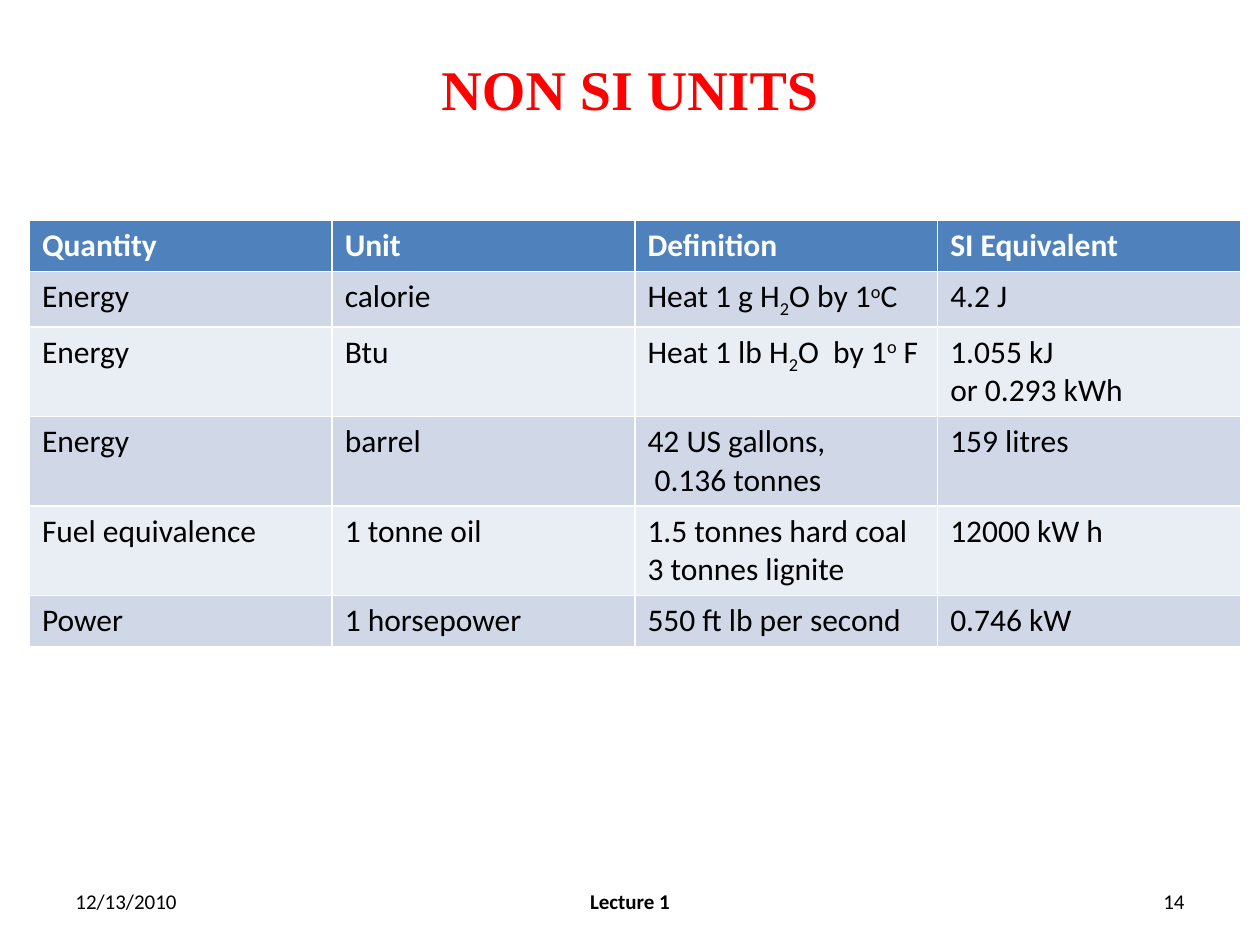
from pptx import Presentation
from pptx.dml.color import RGBColor
from pptx.enum.text import MSO_ANCHOR as Anchor, PP_ALIGN as Align
from pptx.util import Pt

COLORS = {
    "title": "FF0000",
    "text": "000000",
    "header_text": "FFFFFF",
    "header": "4F81BD",
    "odd_band": "D0D8E8",
    "even_band": "E9EDF4",
}
BASELINES = {"_": "-25000", "^": "30000"}

# Each cell: lines split by a newline, runs by "|"; _ lowers a run, ^ raises it
UNITS = [
    ["Quantity", "Unit", "Definition", "SI Equivalent"],
    ["Energy", "calorie", "Heat 1 g H|_2|O by 1|^o|C", "4.2 J"],
    ["Energy", "Btu", "Heat 1 lb H|_2|O  by 1|^o| F", "1.055 kJ\nor 0.293 kWh"],
    ["Energy", "barrel", "42 US gallons,\n 0.136 tonnes", "159 litres"],
    ["Fuel equivalence", "1 tonne oil", "1.5 tonnes hard coal\n3 tonnes lignite", "12000 kW h"],
    ["Power", "1 horsepower", "550 ft lb per second", "0.746 kW"],
]


class SlideBuilder:
    body_font = "Calibri"
    title_font = "Times New Roman"

    def __init__(self, slide):
        self.slide = slide

    def add_text(self, frame, text, size, color="text", bold=False, align=Align.LEFT, font=None):
        for index, line in enumerate(text.split("\n")):
            paragraph = frame.add_paragraph() if index else frame.paragraphs[0]
            paragraph.alignment = align
            for part in line.split("|"):
                baseline = BASELINES.get(part[0])
                run = paragraph.add_run()
                run.text = part[1:] if baseline else part
                run.font.name = font or self.body_font
                run.font.size = Pt(size)
                run.font.bold = bold
                run.font.color.rgb = RGBColor.from_string(COLORS[color])
                if baseline:
                    run._r.get_or_add_rPr().set("baseline", baseline)

    def title(self, text, left, top, width, height):
        heading = self.slide.shapes.title
        heading.left, heading.top = Pt(left), Pt(top)
        heading.width, heading.height = Pt(width), Pt(height)
        heading.text_frame.vertical_anchor = Anchor.MIDDLE
        self.add_text(heading.text_frame, text, 32, "title", True, Align.CENTER, self.title_font)

    def table(self, rows, left, top, column_width, row_height):
        columns = len(rows[0])
        grid = self.slide.shapes.add_table(
            len(rows), columns, Pt(left), Pt(top),
            Pt(column_width * columns), Pt(row_height * len(rows))).table
        for column in grid.columns:
            column.width = Pt(column_width)
        for r, values in enumerate(rows):
            grid.rows[r].height = Pt(row_height)
            header = r == 0
            band = "header" if header else "odd_band" if r % 2 else "even_band"
            for c, value in enumerate(values):
                cell = grid.cell(r, c)
                cell.fill.solid()
                cell.fill.fore_color.rgb = RGBColor.from_string(COLORS[band])
                self.add_text(cell.text_frame, value, 18, "header_text" if header else "text", header)

    def footer(self, text, left, width, align, bold=False):
        box = self.slide.shapes.add_textbox(Pt(left), Pt(500.5), Pt(width), Pt(28.75))
        box.text_frame.word_wrap = True
        box.text_frame.vertical_anchor = Anchor.MIDDLE
        self.add_text(box.text_frame, text, 12, bold=bold, align=align)


def main():
    deck = Presentation()
    deck.slide_width, deck.slide_height = Pt(720), Pt(540)
    builder = SlideBuilder(deck.slides.add_slide(deck.slide_layouts[5]))

    # Title
    builder.title("NON SI UNITS", 36, 21.6, 648, 57)

    # Conversion table
    builder.table(UNITS, 16.8, 126, 173, 29.2)

    # Date, lecture and page number
    builder.footer("12/13/2010", 36, 168, Align.LEFT)
    builder.footer("Lecture 1", 246, 228, Align.CENTER, bold=True)
    builder.footer("14", 516, 168, Align.RIGHT)

    deck.save("out.pptx")


if __name__ == "__main__":
    main()
